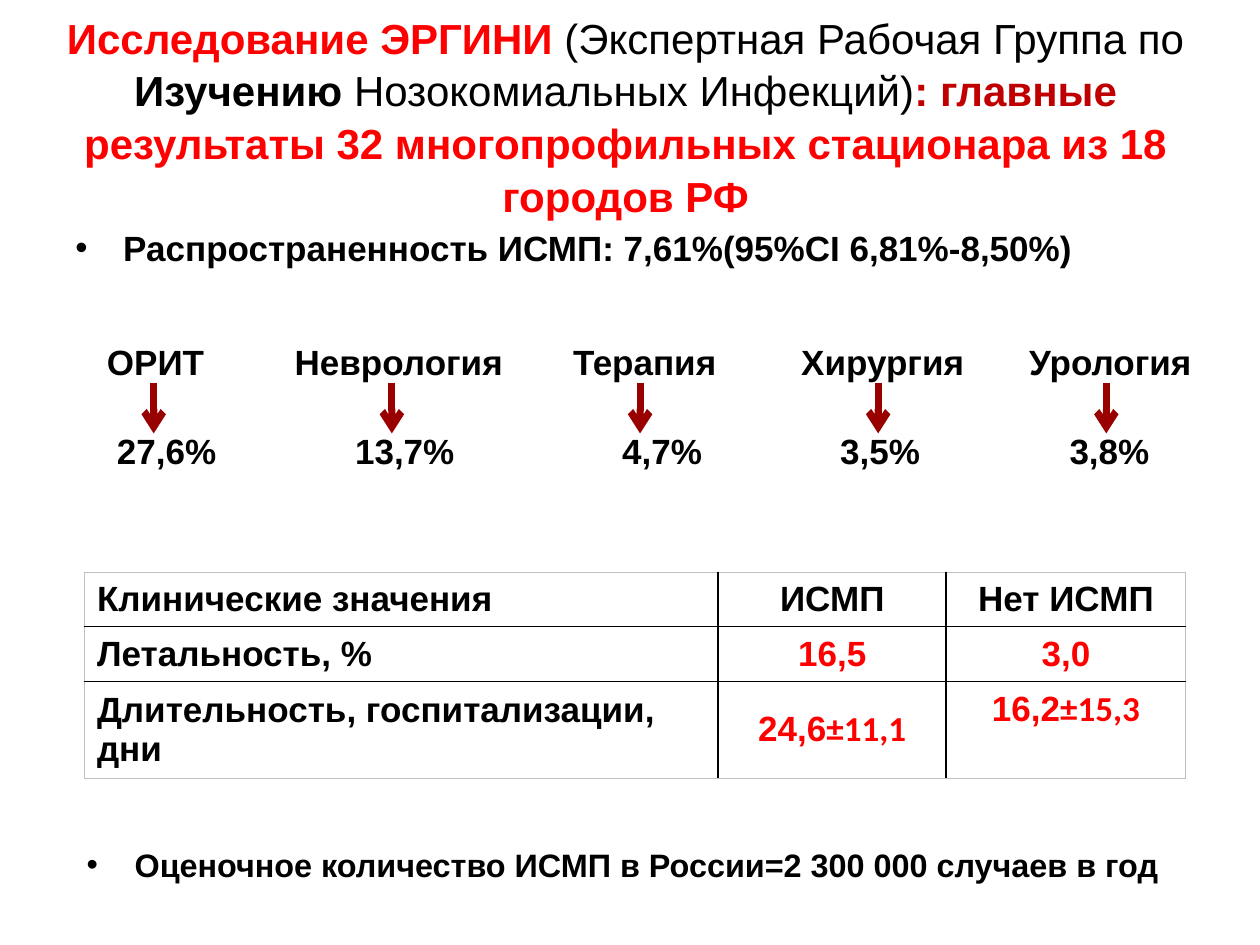
"""Build the slide with the main results of the ERGINI study."""
from lxml import etree
from pptx import Presentation
from pptx.dml.color import RGBColor
from pptx.enum import shapes, text
from pptx.oxml import ns
from pptx.util import Inches, Pt

BLACK = RGBColor(0, 0, 0)
RED = RGBColor(0xFF, 0, 0)
DARK_RED = RGBColor(0xC0, 0, 0)
ARROW_RED = RGBColor(0x99, 0, 0)
GREY = RGBColor(0xBF, 0xBF, 0xBF)
WHITE = RGBColor(0xFF, 0xFF, 0xFF)


def add_span(para, words, color=BLACK, size=20, bold=True, name="Arial"):
    span = para.add_run()
    span.text = words
    span.font.color.rgb = color
    for key, value in {"size": Pt(size), "bold": bold, "name": name}.items():
        setattr(span.font, key, value)


def add_box(left, top, width, height, **settings):
    box = page.shapes.add_textbox(Inches(left), Inches(top), Inches(width), Inches(height))
    for key, value in {"word_wrap": True, **settings}.items():
        setattr(box.text_frame, key, value)
    return box.text_frame.paragraphs[0]


deck = Presentation()
deck.slide_width, deck.slide_height = Inches(10), Inches(7.5)
page = deck.slides.add_slide(deck.slide_layouts[6])

title = add_box(0.2, 0.29, 9.53, 1.25, vertical_anchor=text.MSO_ANCHOR.MIDDLE)
title.alignment = text.PP_ALIGN.CENTER
title.line_spacing = 1.05
for words, color, bold in [
    ("Исследование ЭРГИНИ ", RED, True),
    ("(Экспертная Рабочая Группа по ", BLACK, False),
    ("Изучению ", BLACK, True),
    ("Нозокомиальных Инфекций)", BLACK, False),
    (": главные ", DARK_RED, True),
    ("результаты 32 многопрофильных стационара из 18 городов РФ", RED, True),
]:
    add_span(title, words, color, 24, bold)

for left, top, size, words in [
    (0.5, 1.75, 20, "Распространенность ИСМП: 7,61%(95%СI 6,81%-8,50%)"),
    (0.59, 6.66, 18.5, "Оценочное количество ИСМП в России=2 300 000 случаев в год"),
]:
    para = add_box(left, top, 9, 0.58)
    para.space_before = Pt(size * 0.2)
    props = para._p.get_or_add_pPr()
    props.set("marL", str(Inches(0.38)))
    props.set("indent", str(Inches(-0.38)))
    etree.SubElement(props, ns.qn("a:buFont"), typeface="Arial")
    etree.SubElement(props, ns.qn("a:buChar"), char="•")
    add_span(para, words, size=size)

rows = [
    ["Клинические значения", "ИСМП", "Нет ИСМП"],
    ["Летальность, %", "16,5", "3,0"],
    ["Длительность, госпитализации,\nдни", "24,6±11,1", "16,2±15,3"],
]
frame = page.shapes.add_table(3, 3, Inches(0.67), Inches(4.54), Inches(8.74), Inches(1.57))
table = frame.table
for column, width in zip(table.columns, [5.03, 1.81, 1.9]):
    column.width = Inches(width)
for row, height in zip(table.rows, [0.41, 0.41, 0.75]):
    row.height = Inches(height)
for i, row in enumerate(rows):
    for j, words in enumerate(row):
        cell = table.cell(i, j)
        cell.vertical_anchor = text.MSO_ANCHOR.MIDDLE
        color = RED if i and j else BLACK
        for n, line in enumerate(words.split("\n")):
            para = cell.text_frame.add_paragraph() if n else cell.text_frame.paragraphs[0]
            para.alignment = text.PP_ALIGN.CENTER if j else text.PP_ALIGN.LEFT
            mean, sign, spread = line.partition("±")
            add_span(para, mean, color)
            if sign:
                add_span(para, sign + spread, color, name="Calibri")
        props = cell._tc.get_or_add_tcPr()
        for side, outer in [("L", j == 0), ("R", j == 2), ("T", i == 0), ("B", i == 2)]:
            edge = etree.SubElement(props, ns.qn(f"a:ln{side}"), w=str(Pt(0.5 if outer else 1)))
            fill = etree.SubElement(edge, ns.qn("a:solidFill"))
            etree.SubElement(fill, ns.qn("a:srgbClr"), val=str(GREY if outer else BLACK))
        cell.fill.solid()
        cell.fill.fore_color.rgb = WHITE
table.cell(2, 2).vertical_anchor = text.MSO_ANCHOR.TOP

fit = {"word_wrap": False, "auto_size": text.MSO_AUTO_SIZE.SHAPE_TO_FIT_TEXT}
for ward, ward_left, ward_width, rate, rate_left, rate_width, x in [
    ("ОРИТ", 0.75, 0.98, "27,6%", 0.83, 1, 1.22),
    ("Неврология", 2.24, 1.87, "13,7%", 2.72, 1, 3.11),
    ("Терапия", 4.45, 1.35, "4,7%", 4.84, 0.84, 5.08),
    ("Хирургия", 6.26, 1.51, "3,5%", 6.57, 0.84, 6.97),
    ("Урология", 8.07, 1.5, "3,8%", 8.39, 0.84, 8.78),
]:
    add_span(add_box(ward_left, 2.65, ward_width, 0.44, **fit), ward)
    add_span(add_box(rate_left, 3.36, rate_width, 0.44, **fit), rate)
    arrow = page.shapes.add_connector(
        shapes.MSO_CONNECTOR.STRAIGHT, Inches(x), Inches(3.04), Inches(x), Inches(3.44))
    arrow.line.color.rgb = ARROW_RED
    arrow.line.width = Pt(4)
    etree.SubElement(arrow.line._get_or_add_ln(), ns.qn("a:tailEnd"), type="arrow")
    etree.SubElement(arrow._element.spPr, ns.qn("a:effectLst"))

deck.save("out.pptx")
